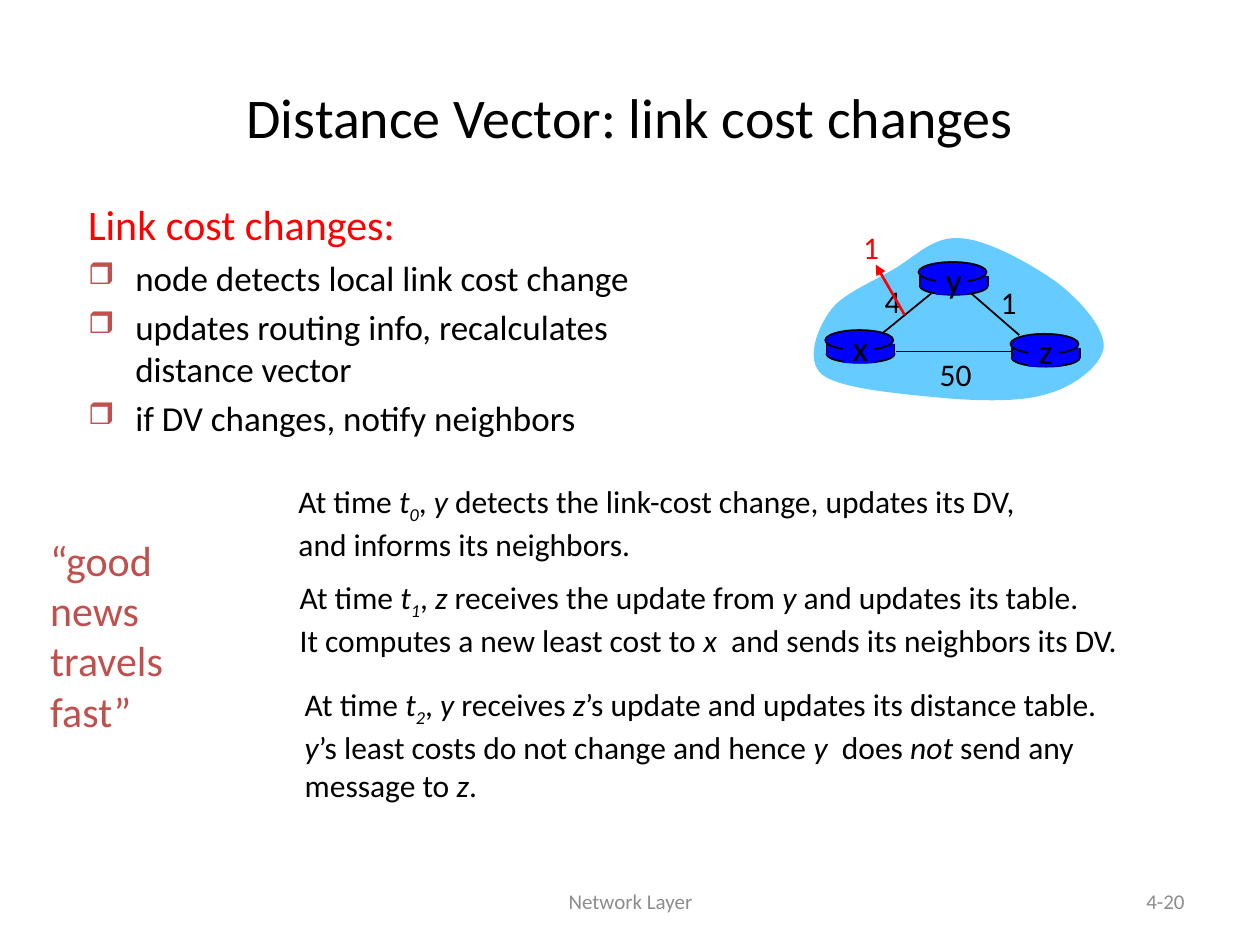
import lxml.etree
import pptx
import pptx.dml.color
import pptx.enum.shapes
import pptx.enum.text
import pptx.oxml.ns
import pptx.util

COLUMNS, ROWS = 100, 75
BLACK, RED, BRICK, GRAY = "000000", "FF0000", "C0504D", "8C8C8C"
ROUTER_BLUE, CLOUD_BLUE = "0000FF", "66CCFF"
Shape = pptx.enum.shapes.MSO_SHAPE
Align = pptx.enum.text.PP_ALIGN
Anchor = pptx.enum.text.MSO_ANCHOR


def color(hex_string):
    return pptx.dml.color.RGBColor.from_string(hex_string)


def add_xml(parent, tag, **attributes):
    return lxml.etree.SubElement(parent, pptx.oxml.ns.qn(tag), attributes)


class SlideBuilder:
    """Draws on one slide; lengths are columns and rows of a 100 by 75 grid."""

    font = "Calibri"

    def __init__(self, deck):
        self.column = deck.slide_width / COLUMNS
        self.row = deck.slide_height / ROWS
        self.slide = deck.slides.add_slide(deck.slide_layouts[5])
        self.shapes = self.slide.shapes

    def point(self, x, y):
        return round(x * self.column), round(y * self.row)

    def box(self, x, y, width, height):
        return self.point(x, y) + self.point(width, height)

    def style(self, run, size, ink, italic=None):
        run.font.name = self.font
        run.font.size = pptx.util.Pt(size)
        run.font.color.rgb = color(ink)
        run.font.italic = italic

    def title(self, wording, box, size):
        title = self.shapes.title
        title.left, title.top, title.width, title.height = self.box(*box)
        title.text_frame.text = wording
        title.text_frame.vertical_anchor = Anchor.MIDDLE
        paragraph = title.text_frame.paragraphs[0]
        paragraph.alignment = Align.CENTER
        self.style(paragraph.runs[0], size, BLACK)

    def text(self, wording, box, size, ink=BLACK, align=Align.LEFT,
             anchor=Anchor.TOP, wrap=True):
        frame = self.shapes.add_textbox(*self.box(*box)).text_frame
        frame.word_wrap = wrap
        frame.vertical_anchor = anchor
        frame.text = wording
        for paragraph in frame.paragraphs:
            paragraph.alignment = align
            for run in paragraph.runs:
                self.style(run, size, ink)
        return frame

    def label(self, wording, center, size=18, ink=BLACK):
        x, y = center
        self.text(wording, (x - 2.5, y - 2, 5, 4), size, ink, Align.CENTER,
                  Anchor.MIDDLE, wrap=False)

    def bullets(self, heading, items, box):
        frame = self.text("\n".join([heading] + items), box, 20)
        first, *rest = frame.paragraphs
        self.style(first.runs[0], 24, RED)
        first.space_before = pptx.util.Pt(4.8)
        indent = round(3.75 * self.column)
        for paragraph in rest:
            paragraph.space_before = pptx.util.Pt(4)
            properties = paragraph._p.get_or_add_pPr()
            properties.set("marL", str(indent))
            properties.set("indent", str(-indent))
            add_xml(add_xml(properties, "a:buClr"), "a:srgbClr", val=BRICK)
            add_xml(properties, "a:buSzPct", val="85000")
            add_xml(properties, "a:buChar", char="❒")

    def rich_text(self, lines, box, size=18):
        """Marks: *italic*, and *t_0* for an italic letter with a subscript."""
        frame = self.text("", box, size)
        for number, line in enumerate(lines):
            paragraph = frame.add_paragraph() if number else frame.paragraphs[0]
            for index, piece in enumerate(line.split("*")):
                base, _, subscript = piece.partition("_")
                for wording, offset in ((base, None), (subscript, "-25000")):
                    if not wording:
                        continue
                    run = paragraph.add_run()
                    run.text = wording
                    self.style(run, size, BLACK, italic=index % 2 == 1)
                    if offset:
                        run._r.get_or_add_rPr().set("baseline", offset)

    def solid(self, kind, box, fill, outline=None):
        shape = self.shapes.add_shape(kind, *self.box(*box))
        self.paint(shape, fill, outline)

    def paint(self, shape, fill, outline=None):
        shape.shadow.inherit = False
        shape.fill.solid()
        shape.fill.fore_color.rgb = color(fill)
        if outline:
            shape.line.color.rgb = color(outline)
            shape.line.width = pptx.util.Pt(1)
        else:
            shape.line.fill.background()

    def line(self, start, end, ink=BLACK, width=1, arrow=False):
        connector = self.shapes.add_connector(
            pptx.enum.shapes.MSO_CONNECTOR.STRAIGHT,
            *self.point(*start), *self.point(*end))
        connector.line.color.rgb = color(ink)
        connector.line.width = pptx.util.Pt(width)
        properties = connector._element.spPr
        if arrow:
            add_xml(properties.get_or_add_ln(), "a:tailEnd", type="triangle")
        add_xml(properties, "a:effectLst")

    def cloud(self, start, curves, fill, steps=12):
        """Closed outline of cubic curves, each given as two controls and an end."""
        outline, here = [], start
        for first, second, end in curves:
            for step in range(1, steps + 1):
                t = step / steps
                weights = ((1 - t) ** 3, 3 * t * (1 - t) ** 2,
                           3 * t ** 2 * (1 - t), t ** 3)
                knots = (here, first, second, end)
                outline.append(self.point(*(
                    sum(w * knot[axis] for w, knot in zip(weights, knots))
                    for axis in (0, 1))))
            here = end
        builder = self.shapes.build_freeform(*self.point(*start))
        builder.add_line_segments(outline, close=True)
        self.paint(builder.convert_to_shape(), fill)

    def router(self, name, x, y):
        width = 5.4
        left, side = x + 0.1, y + 1.1
        self.solid(Shape.OVAL, (left, y + 1.2, width, 1.4), ROUTER_BLUE, BLACK)
        self.solid(Shape.RECTANGLE, (left, side, width, 0.9), ROUTER_BLUE)
        for edge in (left, left + width):
            self.line((edge, side), (edge, side + 0.8))
        self.solid(Shape.OVAL, (x, y, width, 1.6), ROUTER_BLUE, BLACK)
        self.solid(Shape.RECTANGLE, (x + 1.4, y + 0.3, 2.5, 2.3), ROUTER_BLUE)
        self.label(name, (x + 2.8, y + 1.35), 20)


def main():
    deck = pptx.Presentation()
    deck.slide_width = pptx.util.Inches(10)
    deck.slide_height = pptx.util.Inches(7.5)
    page = SlideBuilder(deck)

    page.title("Distance Vector: link cost changes", (5, 3, 90, 12.5), 32)
    page.text("Network Layer", (34.2, 69.5, 31.7, 4), 12, GRAY,
              Align.CENTER, Anchor.MIDDLE)
    page.text("4-20", (71.7, 69.5, 23.3, 4), 12, GRAY, Align.RIGHT, Anchor.MIDDLE)
    page.bullets("Link cost changes:", [
        "node detects local link cost change",
        "updates routing info, recalculates \vdistance vector",
        "if DV changes, notify neighbors",
    ], (6, 15.3, 53.2, 27.6))
    page.text("“good\nnews\ntravels\nfast”", (3, 41.9, 12.8, 17), 24, BRICK)

    page.cloud((65.8, 24.8), [
        ((66.7, 23.4), (69, 22.5), (70.7, 21.5)),
        ((72.4, 20.6), (74, 18.7), (76.2, 18.9)),
        ((78.4, 19), (82.1, 21.1), (84, 22.5)),
        ((85.9, 24), (87.7, 26.1), (87.6, 27.6)),
        ((87.4, 29), (85.3, 30.7), (83, 31.3)),
        ((80.7, 32), (76.9, 31.8), (73.9, 31.5)),
        ((70.9, 31.2), (66.5, 30.8), (65.2, 29.7)),
        ((63.9, 28.5), (64.9, 26.1), (65.8, 24.8)),
    ], CLOUD_BLUE)
    links = [
        ("4", (70.1, 26.4), (73.9, 23.3), (70.85, 23.9)),
        ("1", (77.1, 23.3), (80.9, 26.6), (80.05, 24)),
        ("50", (71.1, 27.9), (80.5, 27.9), (75.85, 29.7)),
    ]
    for cost, start, end, center in links:
        page.line(start, end)
        page.label(cost, center)
    for name, x, y in [("x", 65.5, 26.2), ("z", 80.2, 26.5), ("y", 72.9, 20.8)]:
        page.router(name, x, y)
    page.label("1", (69.15, 19.6), ink=RED)
    page.line((71.8, 25), (69.5, 21), RED, 1.5, arrow=True)

    page.rich_text([
        "At time *t_0*, *y* detects the link-cost change, updates its DV,",
        "and informs its neighbors.",
    ], (22.7, 37.8, 70.9, 10))
    page.rich_text([
        "At time *t_1*, *z* receives the update from *y* and updates its table.",
        "It computes a new least cost to *x*  and sends its neighbors its DV.",
    ], (22.8, 45.4, 77.2, 10))
    page.rich_text([
        "At time *t_2*, *y* receives *z*’s update and updates its distance table.",
        "*y*’s least costs do not change and hence *y*  does *not* send any",
        "message to *z*.",
    ], (23.2, 53.9, 76.8, 13))
    deck.save("out.pptx")


if __name__ == "__main__":
    main()
